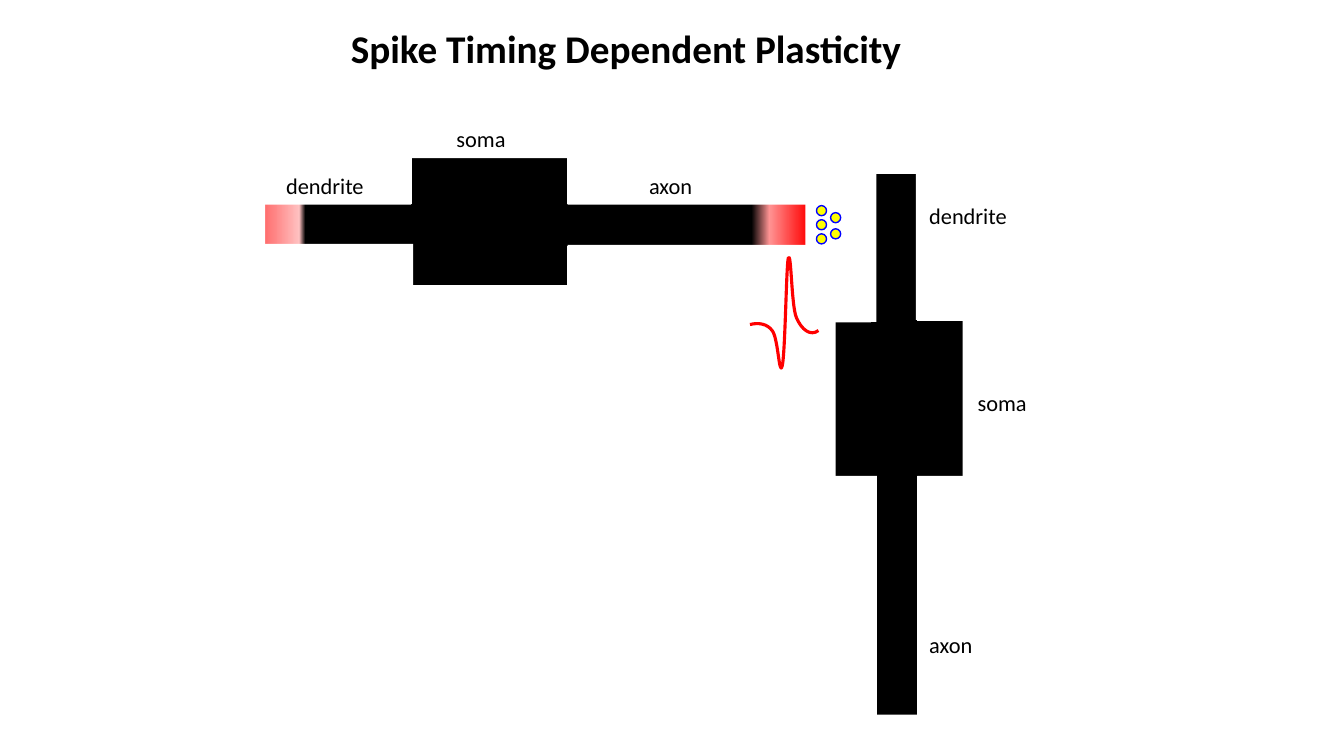
"""Build the spike timing dependent plasticity slide on a grid of 0.1 inch cells."""
import lxml.etree
import pptx
import pptx.dml.color
import pptx.enum.shapes
import pptx.enum.text
import pptx.oxml
import pptx.oxml.ns
import pptx.util

CELL = pptx.util.Inches(0.1)
COLORS = {"ink": "000000", "paper": "FFFFFF", "spike": "FF0000",
          "vesicle": "FFFF00", "rim": "0000FF"}
FONT = "Calibri"
RECT = pptx.enum.shapes.MSO_SHAPE.RECTANGLE
OVAL = pptx.enum.shapes.MSO_SHAPE.OVAL

POST_MASKS = [(83, 70.6, 9.8, 10.4), (83, 15.6, 24, 8.3), (71.5, 16.5, 22.6, 8.3),
              (64.3, 34, 28.9, 8.3), (85.2, 34.6, 28.9, 8.3), (80.1, 58.1, 30.1, 8.3),
              (67.8, 58.1, 30.1, 8.3), (79.5, 4.7, 16.8, 8.3)]
PRE_MASKS = [(79.9, 18.1, 6.8, 10.4), (16.8, 12, 24, 8.3), (18.4, 24.2, 22.6, 8.3),
             (32.8, 28.3, 28.9, 8.3), (33.4, 7.4, 28.9, 8.3), (56.3, 12, 30.1, 8.3),
             (56.3, 24.3, 30.1, 7.7), (9.5, 19.1, 16.8, 8.3)]
AXON_GLOW = [(1, "000000"), (30, "FF9393"), (94, "FF0000"), (100, "000000")]
DENDRITE_GLOW = [(0, "000000"), (10, "FFC1C1"), (55, "FF7E7E"),
                 (91, "FF3B3B"), (100, "000000")]
LABELS = [("soma", 44.3, 11.9, 7.5), ("axon", 63.4, 16.6, 6.9),
          ("dendrite", 27.4, 16.6, 10.7), ("soma", 96, 38.1, 7.5),
          ("axon", 91.2, 62.1, 6.9), ("dendrite", 91.2, 19.6, 10.7)]
SPIKE_START = (81.2, 32.8)
SPIKE_CURVES = [[(80.4, 33.4), (79.5, 32.7), (79, 31.5)],
                [(78.5, 30.3), (78.5, 24.8), (78.2, 25.6)],
                [(78, 26.4), (77.9, 35.1), (77.6, 36.3)],
                [(77.3, 37.5), (77.2, 33.5), (76.6, 32.8)],
                [(76.1, 32.1), (75.2, 32), (74.4, 32.2)]]
VESICLES = [(81, 20.4), (81, 21.8), (81, 23.2), (82.4, 21.1), (82.4, 22.7)]


def cells(*values):
    """Convert grid cells to EMU."""
    return [round(v * CELL) for v in values]


def rgb(name):
    """Look up a named colour."""
    return pptx.dml.color.RGBColor.from_string(COLORS[name])


def add_block(shapes, box, fill, line=None, rot=0, kind=RECT):
    """Add a filled preset shape, outlined when a line colour is given."""
    sp = shapes.add_shape(kind, *cells(*box))
    sp.shadow.inherit = False
    sp.rotation = rot
    sp.fill.solid()
    sp.fill.fore_color.rgb = rgb(fill)
    if line:
        sp.line.color.rgb = rgb(line)
        sp.line.width = pptx.util.Pt(1)
    else:
        sp.line.fill.background()
    return sp


def add_masks(s, boxes, rot=0):
    """Add a group of white blocks that trim a neuron's outline."""
    group = s.shapes.add_group_shape()
    for box in boxes:
        add_block(group.shapes, box, "paper", rot=rot)


def add_glow(s, box, stops, flip=False):
    """Add a rectangle with a horizontal gradient of several stops."""
    sp = add_block(s.shapes, box, "paper")
    marks = "".join(f'<a:gs pos="{pos * 1000}"><a:srgbClr val="{color}"/></a:gs>'
                    for pos, color in stops)
    grad = pptx.oxml.parse_xml(
        f'<a:gradFill {pptx.oxml.ns.nsdecls("a")} rotWithShape="1">'
        f'<a:gsLst>{marks}</a:gsLst><a:lin ang="0" scaled="0"/></a:gradFill>')
    props = sp.element.spPr
    props.replace(props.find(pptx.oxml.ns.qn("a:solidFill")), grad)
    if flip:
        props.find(pptx.oxml.ns.qn("a:xfrm")).set("flipH", "1")


def set_text(sp, text, size, bold=False, wrap=False):
    """Write one left-aligned line in a shape."""
    tf = sp.text_frame
    tf.text = text
    tf.word_wrap = wrap
    tf.auto_size = pptx.enum.text.MSO_AUTO_SIZE.SHAPE_TO_FIT_TEXT
    tf.vertical_anchor = pptx.enum.text.MSO_ANCHOR.TOP
    p = tf.paragraphs[0]
    p.alignment = pptx.enum.text.PP_ALIGN.LEFT
    p.font.name = FONT
    p.font.size = pptx.util.Pt(size)
    p.font.bold = bold
    p.font.color.rgb = rgb("ink")


def add_title(s, text, box):
    """Place and fill the title placeholder."""
    sp = s.shapes.title
    sp.left, sp.top, sp.width, sp.height = cells(*box)
    set_text(sp, text, 28, bold=True, wrap=True)


def add_label(s, text, left, top, width):
    """Add a label naming a part of a neuron."""
    set_text(s.shapes.add_textbox(*cells(left, top, width, 3.7)), text, 16)


def add_curve(s, start, curves):
    """Add an open outline of cubic curves."""
    builder = s.shapes.build_freeform(*cells(*start))
    builder.add_line_segments([cells(*curve[-1]) for curve in curves], close=False)
    sp = builder.convert_to_shape()
    qn = pptx.oxml.ns.qn
    for segment, curve in zip(list(sp.element.iter(qn("a:lnTo"))), curves):
        bezier = lxml.etree.Element(qn("a:cubicBezTo"))
        for x, y in (cells(*point) for point in curve):
            lxml.etree.SubElement(bezier, qn("a:pt"),
                                  x=str(x - sp.left), y=str(y - sp.top))
        segment.getparent().replace(segment, bezier)
    sp.shadow.inherit = False
    sp.fill.background()
    sp.line.color.rgb = rgb("spike")
    sp.line.width = pptx.util.Pt(2.25)


def add_vesicles(s, places):
    """Add the group of transmitter vesicles in the synapse."""
    group = s.shapes.add_group_shape()
    for left, top in places:
        add_block(group.shapes, (left, top, 1, 1), "vesicle", "rim", kind=OVAL)


def main():
    """Build and save the slide."""
    prs = pptx.Presentation()
    prs.slide_width, prs.slide_height = cells(133.33, 75)
    s = prs.slides.add_slide(prs.slide_layouts[5])
    add_title(s, "Spike Timing Dependent Plasticity", (33.8, 1.9, 62.5, 5.7))
    add_block(s.shapes, (81.6, 33.1, 15.3, 12.9), "ink", "ink", 90)
    add_block(s.shapes, (61.5, 41.7, 54.8, 4), "ink", "ink", 90)
    add_block(s.shapes, (40.9, 15.6, 15.3, 12.9), "ink", "ink")
    add_masks(s, POST_MASKS, 90)
    add_block(s.shapes, (25.4, 20.3, 54.8, 4), "ink", "ink")
    add_glow(s, (74.5, 15.1, 6.1, 14.4), AXON_GLOW)
    add_glow(s, (24.2, 14.9, 6.1, 14.4), DENDRITE_GLOW, flip=True)
    add_masks(s, PRE_MASKS)
    for label in LABELS:
        add_label(s, *label)
    s.shapes._spTree.append(s.shapes.title.element)
    add_curve(s, SPIKE_START, SPIKE_CURVES)
    add_vesicles(s, VESICLES)
    prs.save("out.pptx")


if __name__ == "__main__":
    main()
